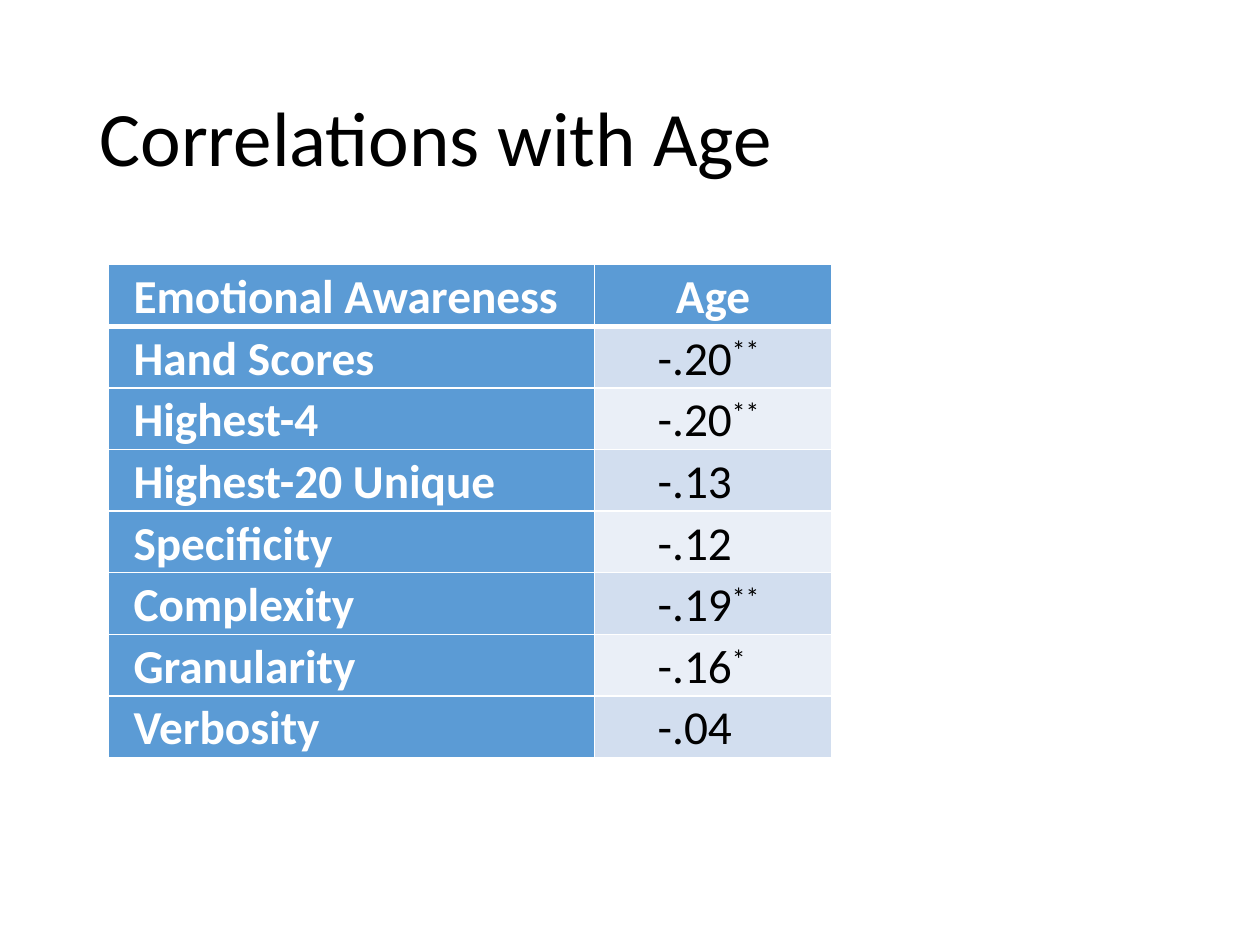
from dataclasses import dataclass

import pptx
import pptx.dml.color
import pptx.enum.text
import pptx.oxml
import pptx.oxml.ns
import pptx.util

ANCHOR = pptx.enum.text.MSO_ANCHOR
ALIGN = pptx.enum.text.PP_ALIGN
WIDTH, HEIGHT = pptx.util.Inches(10), pptx.util.Inches(7.5)
FONT = "Calibri"
BLACK, WHITE, BLUE = "000000", "FFFFFF", "5B9BD5"
BANDS = ("D2DEEF", "EAEFF7")
COLUMNS = (0.386, 0.188)  # shares of the slide's width
ROW = 0.064  # share of the slide's height


@dataclass
class Correlation:
    measure: str
    value: str
    stars: str = ""


CORRELATIONS = [
    Correlation("Hand Scores", "-.20", "**"),
    Correlation("Highest-4", "-.20", "**"),
    Correlation("Highest-20 Unique", "-.13"),
    Correlation("Specificity", "-.12"),
    Correlation("Complexity", "-.19", "**"),
    Correlation("Granularity", "-.16", "*"),
    Correlation("Verbosity", "-.04"),
]


def rgb(color: str) -> pptx.dml.color.RGBColor:
    return pptx.dml.color.RGBColor.from_string(color)


def add_text(p, text: str, *, size: float = 27, color: str = WHITE,
             bold: bool = False, raised: bool = False) -> None:
    r = p.add_run()
    r.text = text
    r.font.name, r.font.size, r.font.bold = FONT, pptx.util.Pt(size), bold
    r.font.color.rgb = rgb(color)
    if raised:
        r.font._element.set("baseline", "30000")


def add_border(cell, side: str, points: float) -> None:
    cell._tc.get_or_add_tcPr().append(pptx.oxml.parse_xml(
        f'<a:ln{side} {pptx.oxml.ns.nsdecls("a")} w="{pptx.util.Pt(points)}">'
        f'<a:solidFill><a:srgbClr val="{WHITE}"/></a:solidFill></a:ln{side}>'))


def format_cell(cell, fill: str, *, top: float = 1, bottom: float = 1,
                anchor=ANCHOR.TOP, align=ALIGN.LEFT):
    """Style the cell and return its paragraph, ready for text."""
    for side, points in (("L", 1), ("R", 1), ("T", top), ("B", bottom)):
        add_border(cell, side, points)
    cell.fill.solid()
    cell.fill.fore_color.rgb = rgb(fill)
    cell.margin_left = cell.margin_right = pptx.util.Inches(0.2)
    cell.margin_top = cell.margin_bottom = 0
    cell.vertical_anchor = anchor
    p = cell.text_frame.paragraphs[0]
    p.alignment, p.line_spacing = align, 1.07
    return p


def add_title(s, text: str) -> None:
    title = s.shapes.title
    title.left, title.top = int(WIDTH * 0.069), int(HEIGHT * 0.053)
    title.width, title.height = int(WIDTH * 0.862), int(HEIGHT * 0.193)
    tf = title.text_frame
    tf.word_wrap, tf.vertical_anchor = True, ANCHOR.MIDDLE
    p = tf.paragraphs[0]
    p.alignment, p.line_spacing = ALIGN.LEFT, 0.9
    add_text(p, text, size=44, color=BLACK)


def add_correlation_table(s, headings: tuple[str, str], rows: list[Correlation]) -> None:
    count = len(rows) + 1
    table = s.shapes.add_table(
        count, len(COLUMNS), int(WIDTH * 0.086), int(HEIGHT * 0.28),
        int(WIDTH * sum(COLUMNS)), int(HEIGHT * ROW * count)).table
    for column, share in zip(table.columns, COLUMNS):
        column.width = int(WIDTH * share)
    for i, (heading, align) in enumerate(zip(headings, (ALIGN.LEFT, ALIGN.CENTER))):
        p = format_cell(table.cell(0, i), BLUE, bottom=3, anchor=ANCHOR.BOTTOM, align=align)
        add_text(p, heading, bold=True)
    for i, row in enumerate(rows, start=1):
        top = 3 if i == 1 else 1
        add_text(format_cell(table.cell(i, 0), BLUE, top=top), row.measure, bold=True)
        p = format_cell(table.cell(i, 1), BANDS[(i - 1) % 2], top=top)
        p._p.get_or_add_pPr().set("marL", str(pptx.util.Inches(0.3)))
        add_text(p, row.value, color=BLACK)
        if row.stars:
            add_text(p, row.stars, color=BLACK, raised=True)


def main() -> None:
    prs = pptx.Presentation()
    prs.slide_width, prs.slide_height = WIDTH, HEIGHT
    s = prs.slides.add_slide(prs.slide_layouts[5])
    add_title(s, "Correlations with Age")
    add_correlation_table(s, ("Emotional Awareness", "Age"), CORRELATIONS)
    prs.save("out.pptx")


if __name__ == "__main__":
    main()
